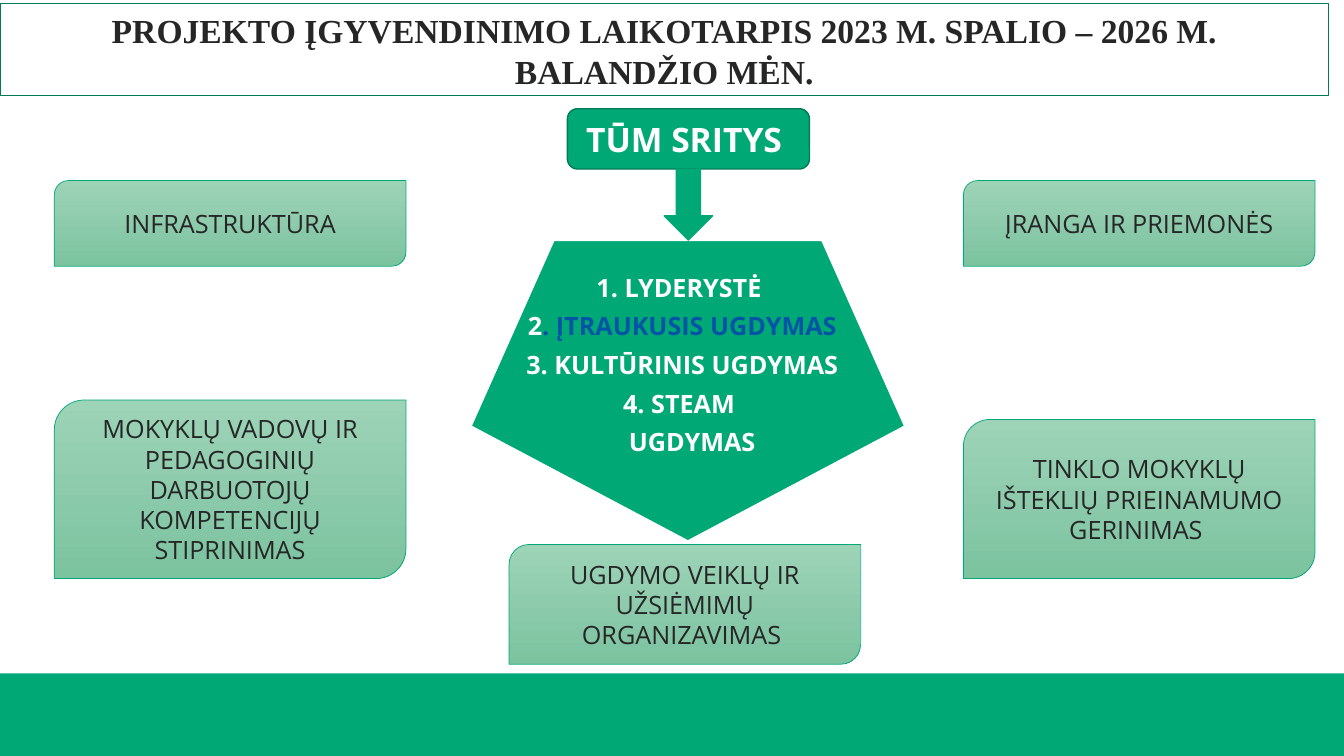
from pptx import Presentation
from pptx.dml.color import RGBColor
from pptx.enum.shapes import MSO_SHAPE
from pptx.enum.text import MSO_ANCHOR, PP_ALIGN
from pptx.util import Cm, Pt

GREEN = RGBColor(0x00, 0xA8, 0x75)
DARK_GREEN = RGBColor(0x00, 0x7C, 0x57)
LIGHT_TOP = RGBColor(0x9D, 0xD3, 0xB7)
LIGHT_BOTTOM = RGBColor(0x7C, 0xC3, 0xA0)
BLUE = RGBColor(0x00, 0x54, 0xA5)
INK = RGBColor(0x26, 0x26, 0x26)
WHITE = RGBColor(0xFF, 0xFF, 0xFF)

RECT = MSO_SHAPE.RECTANGLE
ROUNDED = MSO_SHAPE.ROUNDED_RECTANGLE
DIAGONAL = MSO_SHAPE.ROUND_2_DIAG_RECTANGLE
PENTAGON = MSO_SHAPE.REGULAR_PENTAGON
ARROW = MSO_SHAPE.DOWN_ARROW
CENTER = PP_ALIGN.CENTER
TOP, MIDDLE = MSO_ANCHOR.TOP, MSO_ANCHOR.MIDDLE

TITLE = "PROJEKTO ĮGYVENDINIMO LAIKOTARPIS 2023 M. SPALIO – 2026 M. BALANDŽIO MĖN."
CARD_WIDTH = 8.86
LEFT_X, MIDDLE_X, RIGHT_X = 1.37, 12.83, 24.28
CARDS = [  # left, top, height, text
    (LEFT_X, 4.55, 2.16, "INFRASTRUKTŪRA"),
    (RIGHT_X, 4.55, 2.16, "ĮRANGA IR PRIEMONĖS"),
    (LEFT_X, 10.08, 4.5,
     "MOKYKLŲ VADOVŲ IR PEDAGOGINIŲ DARBUOTOJŲ KOMPETENCIJŲ STIPRINIMAS"),
    (RIGHT_X, 10.57, 4.01, "TINKLO MOKYKLŲ IŠTEKLIŲ PRIEINAMUMO GERINIMAS "),
    (MIDDLE_X, 13.72, 3.02, "UGDYMO VEIKLŲ IR UŽSIĖMIMŲ ORGANIZAVIMAS "),
]
AREAS = [  # runs of each line: text, colour
    [("1. LYDERYSTĖ ", WHITE)],
    [("2", WHITE), (". ĮTRAUKUSIS UGDYMAS", BLUE)],
    [("3. KULTŪRINIS UGDYMAS", WHITE)],
    [("4. STEAM ", WHITE)],
    [("UGDYMAS", WHITE)],
]


def format_paragraph(p, size, color, bold=False, name="Open Sans", spacing=None):
    p.alignment = CENTER
    if spacing:
        p.line_spacing = Pt(spacing)
    for r in p.runs:
        r.font.name = name
        r.font.size = Pt(size)
        r.font.bold = bold
        r.font.color.rgb = color


def add_shape(s, kind, left, top, width, height, line=None, line_width=1.0):
    sp = s.shapes.add_shape(kind, Cm(left), Cm(top), Cm(width), Cm(height))
    sp.shadow.inherit = False
    sp.fill.solid()
    sp.fill.fore_color.rgb = GREEN
    if line is None:
        sp.line.fill.background()
    else:
        sp.line.color.rgb = line
        sp.line.width = Pt(line_width)
    return sp


def set_label(sp, text, size, color, bold=False, spacing=None):
    tf = sp.text_frame
    tf.word_wrap = True
    tf.vertical_anchor = MIDDLE
    tf.text = text
    format_paragraph(tf.paragraphs[0], size, color, bold, spacing=spacing)


def add_card(s, left, top, height, text):
    sp = add_shape(s, DIAGONAL, left, top, CARD_WIDTH, height, GREEN, 0.5)
    sp.fill.gradient()
    sp.fill.gradient_angle = 270
    for stop, color in zip(sp.fill.gradient_stops, (LIGHT_TOP, LIGHT_BOTTOM)):
        stop.color.rgb = color
    set_label(sp, text, 18, INK, spacing=21.6)


def add_area_list(s):
    tf = s.shapes.add_textbox(Cm(12.6), Cm(6.73), Cm(9.19), Cm(4.95)).text_frame
    tf.word_wrap = True
    for i, runs in enumerate(AREAS):
        p = tf.paragraphs[0] if i == 0 else tf.add_paragraph()
        p.space_after = Pt(6)
        for text, color in runs:
            r = p.add_run()
            r.text = text
        format_paragraph(p, 18, WHITE, bold=True, spacing=21.6)
        for r, (text, color) in zip(p.runs, runs):
            r.font.color.rgb = color
    # The last line continues the fourth item, slightly indented
    p._p.get_or_add_pPr().set("marL", str(Cm(0.5)))


def set_title(s):
    sp = s.shapes.title
    sp.left, sp.top, sp.width, sp.height = Cm(0), Cm(0.1), Cm(33.48), Cm(2.31)
    sp.line.color.rgb = DARK_GREEN
    sp.line.width = Pt(0.75)
    tf = sp.text_frame
    tf.text = TITLE
    tf.word_wrap = True
    tf.vertical_anchor = TOP
    format_paragraph(tf.paragraphs[0], 24, INK, True, "Times New Roman", 29.2)


def main():
    prs = Presentation()
    prs.slide_width, prs.slide_height = Cm(33.87), Cm(19.05)
    s = prs.slides.add_slide(prs.slide_layouts[5])

    # Title and bottom band
    set_title(s)
    add_shape(s, RECT, 0, 16.97, 33.87, 2.08)

    # Activity cards
    for card in CARDS:
        add_card(s, *card)

    # Central pentagon with the list of areas
    pentagon = add_shape(s, PENTAGON, 11.86, 6.05, 10.95, 7.59, WHITE, 1.5)
    pentagon.rotation = 180
    add_area_list(s)

    # Heading of the areas and its arrow
    heading = add_shape(s, ROUNDED, 14.3, 2.74, 6.1, 1.52, DARK_GREEN)
    set_label(heading, "TŪM SRITYS ", 24, WHITE, bold=True)
    add_shape(s, ARROW, 16.74, 4.27, 1.22, 1.78, GREEN)

    prs.save("out.pptx")


if __name__ == "__main__":
    main()
